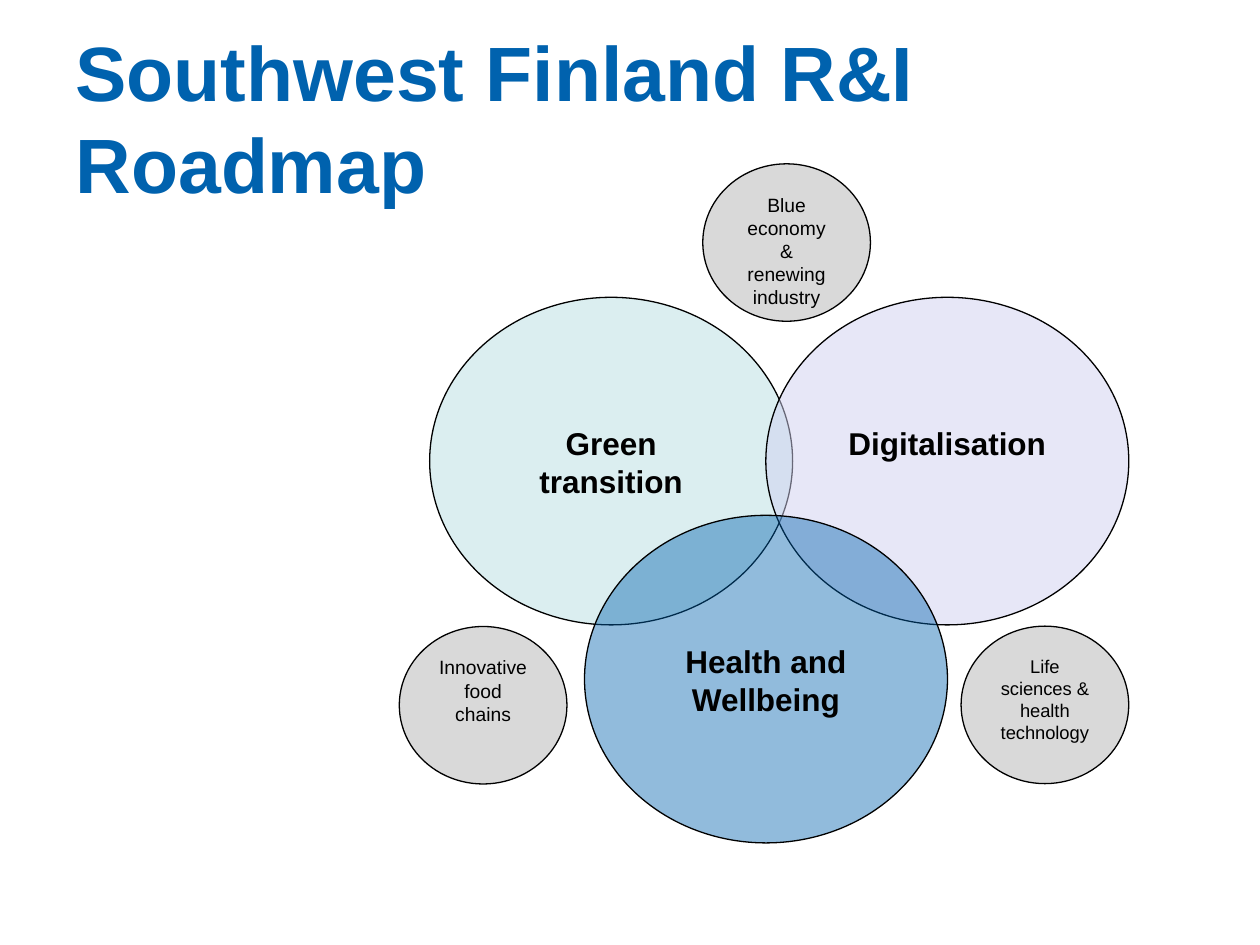
from lxml.etree import SubElement
from pptx import Presentation
from pptx.dml.color import RGBColor
from pptx.enum.shapes import MSO_SHAPE as Shape
from pptx.enum.text import MSO_ANCHOR as Anchor, MSO_AUTO_SIZE as AutoSize, PP_ALIGN as Align
from pptx.oxml.ns import qn
from pptx.util import Pt

BLUE = RGBColor(0x00, 0x62, 0xAE)
TEAL = RGBColor(0xBB, 0xE0, 0xE3)
LILAC = RGBColor(0xD1, 0xD1, 0xF0)
GREY = RGBColor(0xD9, 0xD9, 0xD9)
BLACK = RGBColor(0x00, 0x00, 0x00)

TITLE_ONLY = 5
THEME_SIZE = (207.4, 187.2)
SECTOR_SIZE = (95.8, 90)
THEME_TEXT_DROP = 45

# label, left, top, colour, opacity in percent
THEMES = [
    ("Green transition", 245.5, 169.9, TEAL, 52),
    ("Digitalisation", 437.6, 169.9, LILAC, 50),
    ("Health and Wellbeing", 334, 294.5, BLUE, 43),
]
# label, left, top, font size
SECTORS = [
    ("Blue economy & renewing industry", 401.6, 93.6, 11),
    ("Innovative food chains", 228.2, 358, 11),
    ("Life sciences & health technology", 549.2, 357.8, 10.5),
]


def write(frame, text, size, color=BLACK, bold=False, align=Align.CENTER, anchor=Anchor.TOP):
    frame.word_wrap = True
    frame.auto_size = AutoSize.NONE
    frame.vertical_anchor = anchor
    paragraph = frame.paragraphs[0]
    paragraph.alignment = align
    run = paragraph.add_run()
    run.text = text
    font = run.font
    font.name, font.size, font.bold = "Arial", Pt(size), bold
    font.color.rgb = color


def set_opacity(shape, percent):
    color = shape.fill._xPr.find(qn("a:solidFill"))[0]
    SubElement(color, qn("a:alpha")).set("val", str(percent * 1000))


class RoadmapSlide:
    """Holds the line style and the slide being filled."""

    def __init__(self, slide, line_color=BLACK, line_width=0.75):
        self.slide = slide
        self.line_color = line_color
        self.line_width = line_width

    def title(self, text):
        title = self.slide.shapes.title
        title.left, title.top, title.width, title.height = map(Pt, (36, 21.6, 648, 90))
        write(title.text_frame, text, 44, color=BLUE, bold=True,
              align=Align.LEFT, anchor=Anchor.MIDDLE)

    def ellipse(self, text, left, top, extent, fill, size, bold=False, opacity=100, text_drop=3.6):
        """Add a labelled ellipse whose text starts text_drop points below its inner top."""
        shape = self.slide.shapes.add_shape(Shape.OVAL, *map(Pt, (left, top, *extent)))
        shape.shadow.inherit = False
        shape.fill.solid()
        shape.fill.fore_color.rgb = fill
        if opacity < 100:
            set_opacity(shape, opacity)
        shape.line.color.rgb = self.line_color
        shape.line.width = Pt(self.line_width)
        shape.text_frame.margin_top = Pt(text_drop)
        write(shape.text_frame, text, size, bold=bold)


def main():
    presentation = Presentation()
    presentation.slide_width, presentation.slide_height = Pt(720), Pt(540)
    layout = presentation.slide_layouts[TITLE_ONLY]
    roadmap = RoadmapSlide(presentation.slides.add_slide(layout))

    roadmap.title("Southwest Finland R&I Roadmap")
    for label, left, top, color, opacity in THEMES:
        roadmap.ellipse(label, left, top, THEME_SIZE, color, 18, bold=True,
                        opacity=opacity, text_drop=THEME_TEXT_DROP)
    for label, left, top, size in SECTORS:
        roadmap.ellipse(label, left, top, SECTOR_SIZE, GREY, size)

    presentation.save("out.pptx")


if __name__ == "__main__":
    main()
